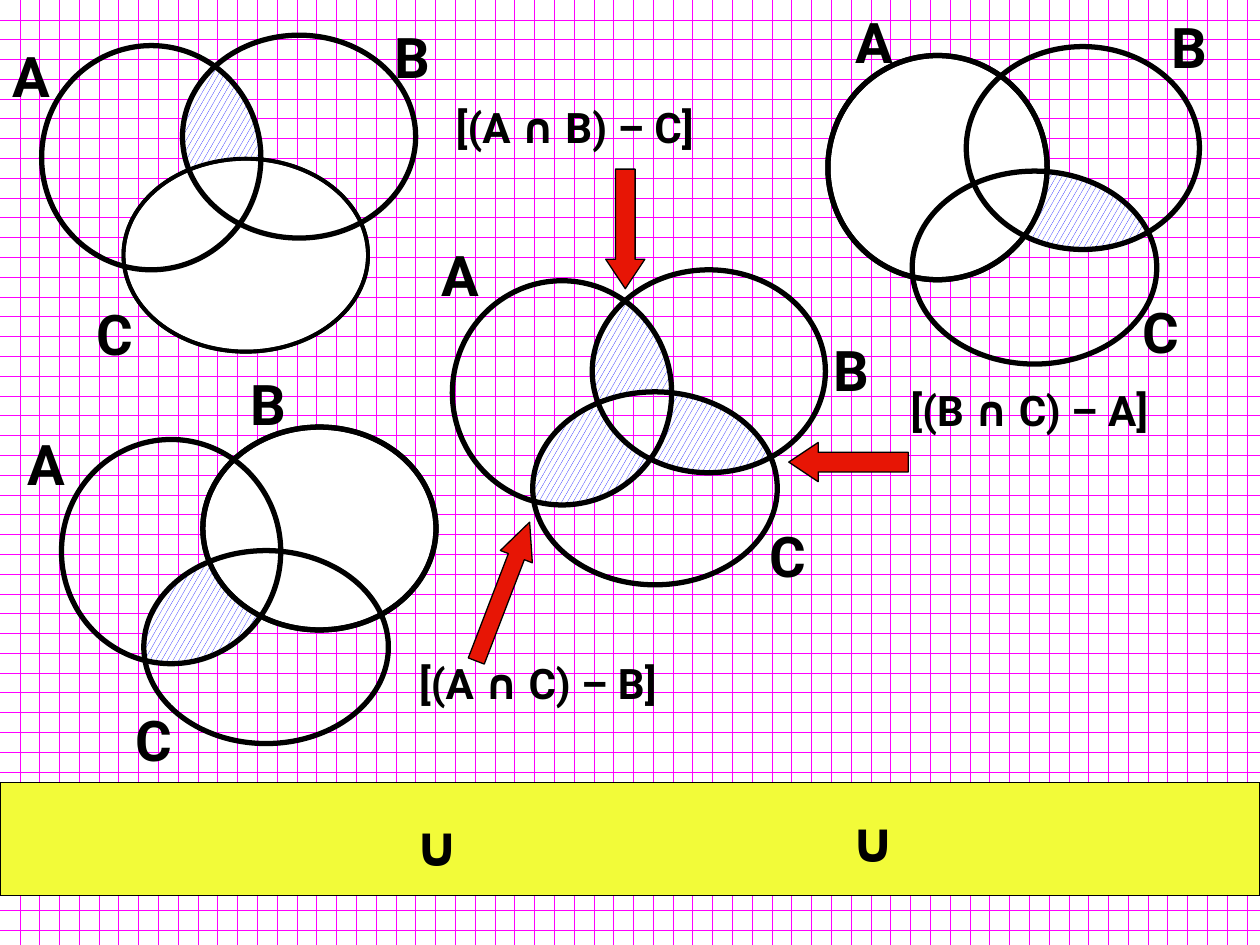
import math
from itertools import combinations

from pptx import Presentation
from pptx.dml.color import RGBColor
from pptx.enum.dml import MSO_PATTERN
from pptx.enum.shapes import MSO_SHAPE
from pptx.util import Cm, Pt

OVAL = MSO_SHAPE.OVAL
RECTANGLE = MSO_SHAPE.RECTANGLE
RIGHT_ARROW = MSO_SHAPE.RIGHT_ARROW
DOTTED_GRID = MSO_PATTERN.DOTTED_GRID
LARGE_CONFETTI = MSO_PATTERN.LARGE_CONFETTI

BLACK = RGBColor(0x00, 0x00, 0x00)
WHITE = RGBColor(0xFF, 0xFF, 0xFF)
MAGENTA = RGBColor(0xFF, 0x00, 0xFF)
BLUE = RGBColor(0x00, 0x00, 0xFF)
YELLOW = RGBColor(0xF2, 0xFB, 0x39)
RED = RGBColor(0xE7, 0x15, 0x05)

FONT = "Roboto"
SETS = "ABC"
SET_SIZES = {"A": (4.42, 4.52), "B": (4.70, 4.09), "C": (4.93, 3.89)}

# Per diagram: ellipse corners and label corners for A, B, C (cm),
# the white set that is taken away (None: all three regions), its line in pt
DIAGRAMS = [
    ([(9.12, 5.66), (11.94, 5.44), (10.74, 7.90)],
     [(8.66, 4.72), (16.56, 6.63), (15.27, 10.39)], None, 3),
    ([(1.24, 8.86), (4.09, 8.61), (2.90, 11.10)],
     [(0.30, 8.53), (4.80, 7.32), (2.49, 14.10)], "B", 3),
    ([(16.69, 1.12), (19.48, 0.94), (18.39, 3.45)],
     [(16.99, 0.03), (23.37, 0.13), (22.78, 5.87)], "A", 3),
    ([(0.84, 0.92), (3.68, 0.71), (2.49, 3.20)],
     [(0, 0.71), (7.70, 0.33), (1.70, 5.92)], "C", 2.25),
]
FORMULAS = [
    ("[(A ∩ B) – C]", 8.94, 1.93),
    ("[(B ∩ C) – A]", 18.11, 7.62),
    ("[(A ∩ C) – B]", 8.20, 13.13),
]
UNIONS = [(8.10, 16.21), (16.89, 16.13)]
# left, top, width, height, rotation, head length
ARROWS = [
    (11.40, 4.22, 2.41, 0.79, 90, 0.75),
    (15.90, 8.92, 2.41, 0.79, 180, 0.75),
    (8.64, 11.58, 3.00, 0.69, 291, 1.08),
]


def set_pattern(fill, pattern, color):
    fill.patterned()
    fill.pattern = pattern
    fill.fore_color.rgb = color
    fill.back_color.rgb = WHITE


def add_shape(slide, kind, box, fill=None, line_width=0.75):
    sp = slide.shapes.add_shape(kind, *(Cm(v) for v in box))
    sp.shadow.inherit = False
    if fill is None:
        sp.fill.background()
    else:
        sp.fill.solid()
        sp.fill.fore_color.rgb = fill
    sp.line.color.rgb = BLACK
    sp.line.width = Pt(line_width)
    return sp


def add_text(slide, text, left, top, width, height, size):
    sp = slide.shapes.add_textbox(Cm(left), Cm(top), Cm(width), Cm(height))
    tf = sp.text_frame
    tf.word_wrap = True
    p = tf.paragraphs[0]
    p.text = text
    p.font.name = FONT
    p.font.size = Pt(size)
    p.font.bold = True
    p.font.color.rgb = BLACK


def contains(box, point):
    left, top, width, height = box
    x, y = point
    dx = (x - left) / width - 0.5
    dy = (y - top) / height - 0.5
    return dx * dx + dy * dy < 0.25


def ellipse_points(box):
    left, top, width, height = box
    for degrees in range(0, 360, 2):
        t = math.radians(degrees)
        yield (left + width / 2 * (1 + math.cos(t)),
               top + height / 2 * (1 + math.sin(t)))


def region_outline(first, second, removed):
    """Points around the part of first and second that lies outside removed."""
    points = [pt for box, other in ((first, second), (second, first))
              for pt in ellipse_points(box)
              if contains(other, pt) and not contains(removed, pt)]
    points += [pt for pt in ellipse_points(removed)
               if contains(first, pt) and contains(second, pt)]
    cx = sum(x for x, _ in points) / len(points)
    cy = sum(y for _, y in points) / len(points)
    return sorted(points, key=lambda pt: math.atan2(pt[1] - cy, pt[0] - cx))


def add_region(slide, boxes, pair, removed):
    outline = region_outline(*(boxes[name] for name in pair), boxes[removed])
    start, *rest = [(Cm(x), Cm(y)) for x, y in outline]
    builder = slide.shapes.build_freeform(*start)
    builder.add_line_segments(rest, close=True)
    sp = builder.convert_to_shape()
    sp.shadow.inherit = False
    set_pattern(sp.fill, LARGE_CONFETTI, BLUE)
    sp.line.fill.background()


def add_venn(slide, corners, labels, white_set, white_line):
    boxes = {name: corner + SET_SIZES[name]
             for name, corner in zip(SETS, corners)}
    if white_set:
        add_shape(slide, OVAL, boxes[white_set], WHITE, white_line)
    for pair in combinations(SETS, 2):
        removed = next(name for name in SETS if name not in pair)
        if white_set in (None, removed):
            add_region(slide, boxes, pair, removed)
    for name, label in zip(SETS, labels):
        if name != white_set:
            add_shape(slide, OVAL, boxes[name], line_width=3)
        add_text(slide, name, *label, 1.32, 1.65, 32)
    if white_set:
        add_shape(slide, OVAL, boxes[white_set], line_width=white_line)


def add_arrow(slide, left, top, width, height, rotation, head):
    sp = add_shape(slide, RIGHT_ARROW, (left, top, width, height), RED)
    sp.rotation = rotation
    sp.adjustments[1] = head


def main():
    prs = Presentation()
    prs.slide_width, prs.slide_height = Cm(25.4), Cm(19.05)
    slide = prs.slides.add_slide(prs.slide_layouts[6])
    set_pattern(slide.background.fill, DOTTED_GRID, MAGENTA)

    add_shape(slide, RECTANGLE, (0, 15.77, 25.4, 2.29), YELLOW)
    for diagram in DIAGRAMS:
        add_venn(slide, *diagram)
    for text, left, top in FORMULAS:
        add_text(slide, text, left, top, 7.29, 1.27, 24)
    for left, top in UNIONS:
        add_text(slide, "∪", left, top, 1.6, 1.62, 32)
    for arrow in ARROWS:
        add_arrow(slide, *arrow)
    prs.save("out.pptx")


if __name__ == "__main__":
    main()
